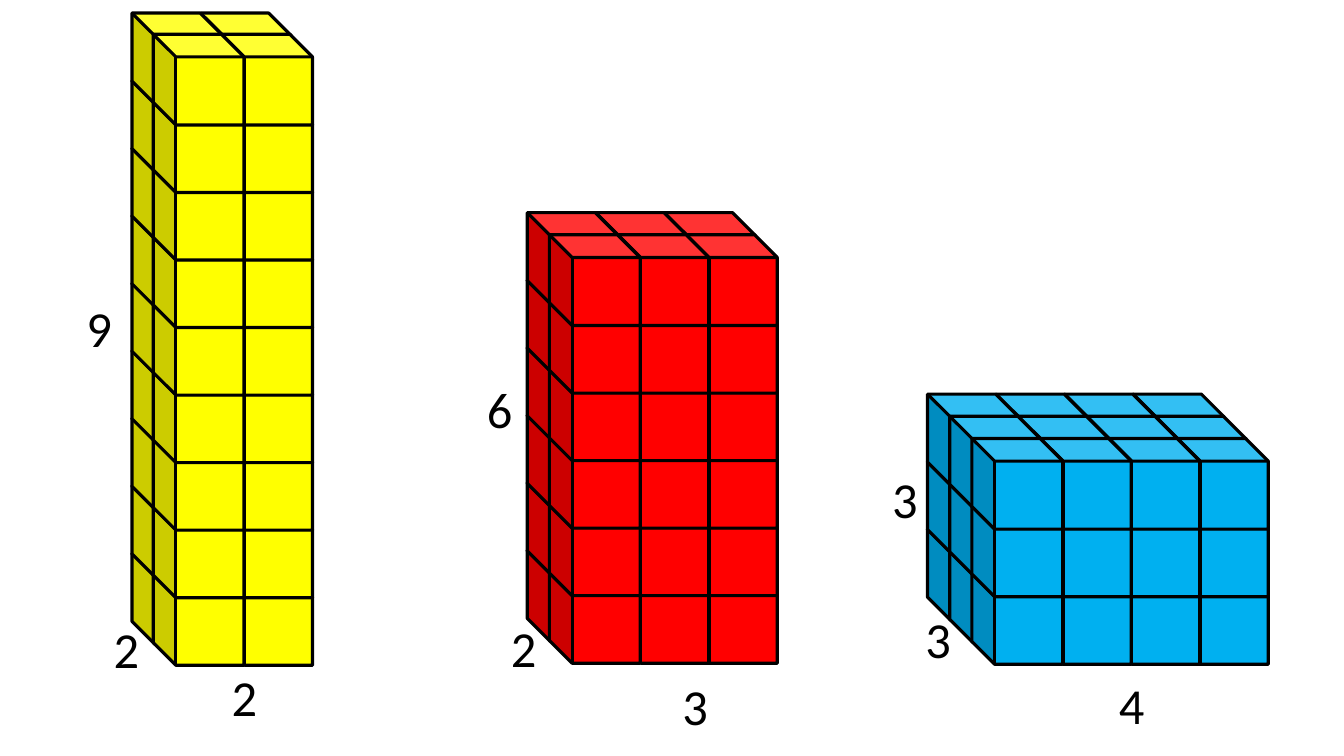
from dataclasses import dataclass

from pptx import Presentation
from pptx.dml.color import RGBColor
from pptx.enum.shapes import MSO_SHAPE
from pptx.enum.text import MSO_AUTO_SIZE
from pptx.util import Inches, Pt

CUBE = MSO_SHAPE.CUBE
FIT_SHAPE = MSO_AUTO_SIZE.SHAPE_TO_FIT_TEXT


@dataclass(frozen=True)
class Theme:
    yellow: RGBColor = RGBColor(0xFF, 0xFF, 0x00)
    red: RGBColor = RGBColor(0xFF, 0x00, 0x00)
    blue: RGBColor = RGBColor(0x00, 0xB0, 0xF0)
    ink: RGBColor = RGBColor(0x00, 0x00, 0x00)
    font: str = "Calibri"
    label_size: Pt = Pt(36)
    outline: Pt = Pt(2.25)


THEME = Theme()

CUBE_SIZE = 0.9
COLUMN_STEP = 0.68
ROW_STEP = 0.67
LABEL_WIDTH, LABEL_HEIGHT = 0.67, 0.71


@dataclass(frozen=True)
class Prism:
    """A block of unit cubes; label offsets run from its top left corner."""
    left: float
    top: float
    width: int
    depth: int
    height: int
    depth_step: float
    color: RGBColor
    width_label: tuple
    depth_label: tuple
    height_label: tuple


PRISMS = [
    Prism(1.31, 0.13, 2, 2, 9, 0.21, THEME.yellow,
          (0.89, 6.43), (-0.28, 5.95), (-0.55, 2.77)),
    Prism(5.23, 2.11, 3, 2, 6, 0.22, THEME.red,
          (1.44, 4.54), (-0.26, 3.96), (-0.5, 1.59)),
    Prism(9.2, 3.91, 4, 3, 3, 0.22, THEME.blue,
          (1.8, 2.73), (-0.12, 2.07), (-0.45, 0.68)),
]


def add_cube(shapes, left, top, color):
    cube = shapes.add_shape(CUBE, Inches(left), Inches(top),
                            Inches(CUBE_SIZE), Inches(CUBE_SIZE))
    cube.element.spPr.get_or_add_xfrm().set("flipH", "1")
    cube.shadow.inherit = False
    cube.fill.solid()
    cube.fill.fore_color.rgb = color
    cube.line.color.rgb = THEME.ink
    cube.line.width = THEME.outline


def add_label(shapes, left, top, number):
    box = shapes.add_textbox(Inches(left), Inches(top),
                             Inches(LABEL_WIDTH), Inches(LABEL_HEIGHT))
    frame = box.text_frame
    frame.word_wrap = True
    frame.auto_size = FIT_SHAPE
    frame.text = str(number)
    font = frame.paragraphs[0].runs[0].font
    font.name = THEME.font
    font.size = THEME.label_size
    font.color.rgb = THEME.ink


def add_prism(page, prism):
    """Stack cubes bottom to top, back to front, right to left, then label."""
    shapes = page.shapes.add_group_shape().shapes
    for row in reversed(range(prism.height)):
        for layer in range(prism.depth):
            shift = layer * prism.depth_step
            for column in reversed(range(prism.width)):
                add_cube(shapes,
                         prism.left + column * COLUMN_STEP + shift,
                         prism.top + row * ROW_STEP + shift,
                         prism.color)
    for number, (across, down) in (
        (prism.width, prism.width_label),
        (prism.depth, prism.depth_label),
        (prism.height, prism.height_label),
    ):
        add_label(shapes, prism.left + across, prism.top + down, number)


def main():
    deck = Presentation()
    deck.slide_width = Inches(13.33)
    deck.slide_height = Inches(7.5)
    page = deck.slides.add_slide(deck.slide_layouts[6])
    for prism in PRISMS:
        add_prism(page, prism)
    deck.save("out.pptx")


if __name__ == "__main__":
    main()
